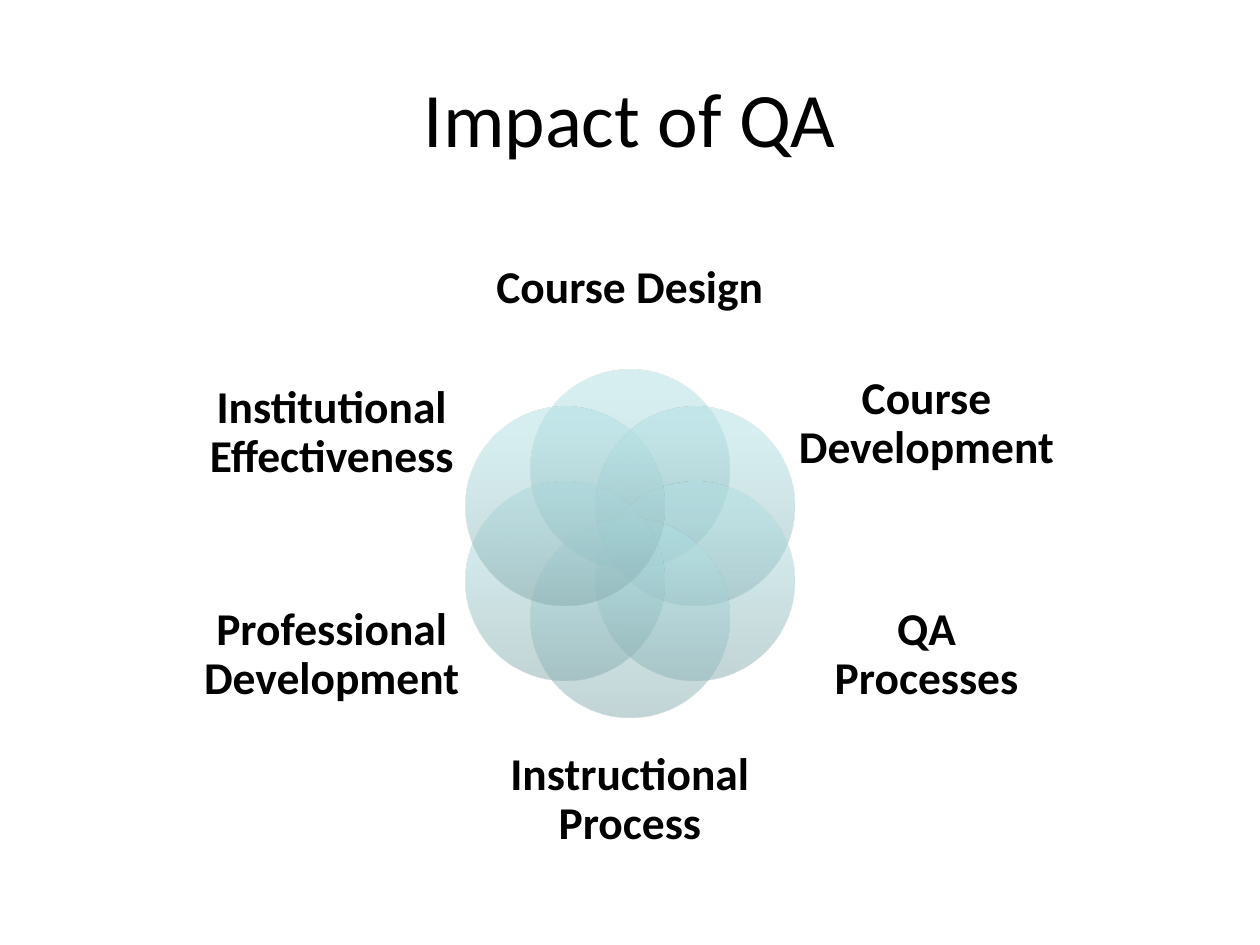
from dataclasses import dataclass
from math import cos, pi, sin

from lxml.etree import SubElement
from pptx import Presentation
from pptx.dml.color import RGBColor
from pptx.enum.shapes import MSO_SHAPE as Shape
from pptx.enum.text import MSO_ANCHOR as Anchor, PP_ALIGN as Align
from pptx.oxml.ns import qn
from pptx.shapes.group import GroupShape
from pptx.text.text import TextFrame
from pptx.util import Cm, Pt

FONT = "Calibri"
BLACK = "000000"
PETAL_STOPS = ((0, "87ABAE"), (80, "AFDEE2"), (100, "AFE0E4"))
PETAL_OPACITY = 50
CENTER_X, CENTER_Y = 12.7, 10.96
RING_RADIUS, PETAL_SIZE = 1.51, 4.01
LEFT_X, MIDDLE_X, RIGHT_X = 4.01, 9.87, 16.0
SIDE_WIDTH, MIDDLE_WIDTH = 5.36, 5.66
UPPER_Y, LOWER_Y = 7.06, 11.53


@dataclass
class Impact:
    """One area of impact, with its label box in centimetres."""
    label: str
    left: float
    top: float
    width: float
    height: float


# Clockwise from the top of the ring
IMPACTS = [
    Impact("Course Design", MIDDLE_X, 4.45, MIDDLE_WIDTH, 2.74),
    Impact("Course Development", RIGHT_X, UPPER_Y, SIDE_WIDTH, 3.0),
    Impact("QA\vProcesses", RIGHT_X, LOWER_Y, SIDE_WIDTH, 3.35),
    Impact("Instructional Process", MIDDLE_X, 14.76, MIDDLE_WIDTH, 2.74),
    Impact("Professional Development", LEFT_X, LOWER_Y, SIDE_WIDTH, 3.35),
    Impact("Institutional Effectiveness", LEFT_X, UPPER_Y, SIDE_WIDTH, 3.35),
]


def rgb(color: str) -> RGBColor:
    return RGBColor.from_string(color)


def set_text(frame: TextFrame, text: str, size: int, bold: bool) -> None:
    frame.word_wrap = True
    frame.vertical_anchor = Anchor.MIDDLE
    paragraph = frame.paragraphs[0]
    paragraph.text = text
    paragraph.alignment = Align.CENTER
    for run in paragraph.runs:
        run.font.name = FONT
        run.font.size = Pt(size)
        run.font.bold = bold
        run.font.color.rgb = rgb(BLACK)


def add_petal(ring: GroupShape, angle: float) -> None:
    """Add a translucent circle at an angle clockwise from the top."""
    left = CENTER_X + RING_RADIUS * sin(angle) - PETAL_SIZE / 2
    top = CENTER_Y - RING_RADIUS * cos(angle) - PETAL_SIZE / 2
    petal = ring.shapes.add_shape(
        Shape.OVAL, Cm(left), Cm(top), Cm(PETAL_SIZE), Cm(PETAL_SIZE))
    petal.shadow.inherit = False
    petal.line.fill.background()
    petal.fill.gradient()
    petal.fill.gradient_angle = 90
    stops = next(petal.element.iter(qn("a:gsLst")))
    for stop in list(stops):
        stops.remove(stop)
    for position, color in PETAL_STOPS:
        stop = SubElement(stops, qn("a:gs"), pos=str(position * 1000))
        tint = SubElement(stop, qn("a:srgbClr"), val=color)
        SubElement(tint, qn("a:alpha"), val=str(PETAL_OPACITY * 1000))


def add_label(ring: GroupShape, impact: Impact) -> None:
    box = ring.shapes.add_textbox(
        Cm(impact.left), Cm(impact.top), Cm(impact.width), Cm(impact.height))
    frame = box.text_frame
    frame.margin_left = frame.margin_right = 0
    frame.margin_top = frame.margin_bottom = 0
    set_text(frame, impact.label, 26, True)
    frame.paragraphs[0].line_spacing = 0.9
    frame.paragraphs[0].space_after = Pt(9)


def main() -> None:
    deck = Presentation()
    deck.slide_width, deck.slide_height = Cm(25.4), Cm(19.05)
    slide = deck.slides.add_slide(deck.slide_layouts[5])

    title = slide.shapes.title
    title.left, title.top = Cm(1.27), Cm(0.76)
    title.width, title.height = Cm(22.86), Cm(3.18)
    set_text(title.text_frame, "Impact of QA", 44, False)

    ring = slide.shapes.add_group_shape()
    for index, impact in enumerate(IMPACTS):
        add_petal(ring, index * 2 * pi / len(IMPACTS))
        add_label(ring, impact)

    deck.save("out.pptx")


if __name__ == "__main__":
    main()
